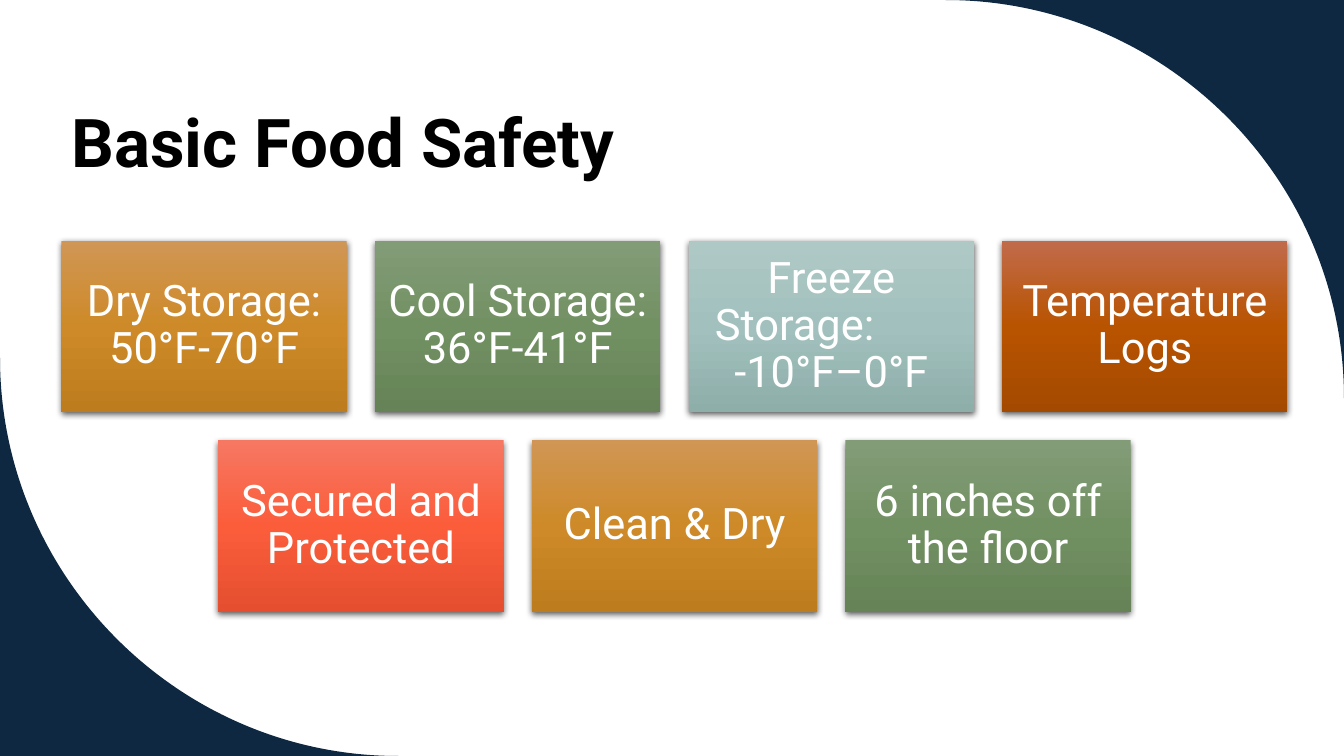
from dataclasses import dataclass
from copy import deepcopy

from lxml import etree
from pptx import Presentation
from pptx.dml.color import RGBColor
from pptx.enum import shapes, text
from pptx.oxml import ns
from pptx.util import Inches, Pt

FONT = "Roboto"
NAVY = RGBColor(0x0E, 0x28, 0x41)
BLACK = RGBColor(0, 0, 0)
WHITE = RGBColor(0xFF, 0xFF, 0xFF)

# Gradients from top to bottom
GOLD = (RGBColor(0xD0, 0x96, 0x55), RGBColor(0xCE, 0x8A, 0x28), RGBColor(0xBD, 0x7C, 0x1D))
GREEN = (RGBColor(0x83, 0x9C, 0x78), RGBColor(0x72, 0x91, 0x63), RGBColor(0x65, 0x83, 0x56))
TEAL = (RGBColor(0xAE, 0xC8, 0xC5), RGBColor(0xA2, 0xC1, 0xBE), RGBColor(0x8E, 0xAE, 0xAA))
RUST = (RGBColor(0xC1, 0x6B, 0x4B), RGBColor(0xB8, 0x53, 0x00), RGBColor(0xA4, 0x4A, 0x00))
CORAL = (RGBColor(0xF6, 0x77, 0x62), RGBColor(0xFB, 0x5D, 0x3B), RGBColor(0xE5, 0x4F, 0x2F))

WIDE, HIGH = 13.33, 7.5
RADIUS = 3.95
BEND = 0.55  # pull of a curve's handles that makes a quarter circle
CARD_W, CARD_H, GAP = 2.83, 1.7, 0.28
MIDDLE, TOP = 6.69, 2.39


@dataclass
class Card:
    lines: list[str]
    shades: tuple[RGBColor, ...]
    shift: int | None = None  # index of the line set at the left


ROWS = [
    [
        Card(["Dry Storage: 50°F-70°F"], GOLD),
        Card(["Cool Storage: 36°F-41°F"], GREEN),
        Card(["Freeze", "Storage:", "-10°F–0°F"], TEAL, shift=1),
        Card(["Temperature Logs"], RUST),
    ],
    [
        Card(["Secured and Protected"], CORAL),
        Card(["Clean & Dry"], GOLD),
        Card(["6 inches off the floor"], GREEN),
    ],
]


def style(para, size: int, color: RGBColor, bold: bool = False) -> None:
    para.line_spacing = 0.9
    para.font.name = FONT
    para.font.size = Pt(size)
    para.font.bold = bold
    para.font.color.rgb = color


def bend_side(shape) -> None:
    """Turn the side opposite the first point into a quarter circle."""
    geom = shape.element.spPr
    first = geom.find(".//" + ns.qn("a:moveTo"))
    lines = geom.findall(".//" + ns.qn("a:lnTo"))
    corner, start, end = (
        (int(step[0].get("x")), int(step[0].get("y"))) for step in (first, *lines[:2]))
    curve = etree.Element(ns.qn("a:cubicBezTo"))
    for point, pull in ((start, BEND), (end, BEND), (end, 0)):
        x, y = (round(p + pull * (c - p)) for p, c in zip(point, corner))
        etree.SubElement(curve, ns.qn("a:pt"), x=str(x), y=str(y))
    lines[1].getparent().replace(lines[1], curve)


def draw_corner(slide, x: float, y: float) -> None:
    """Fill the area between a slide corner and a quarter circle."""
    side_x = x - RADIUS if x else RADIUS
    side_y = y - RADIUS if y else RADIUS
    pen = slide.shapes.build_freeform(Inches(x), Inches(y))
    ends = [(Inches(side_x), Inches(y)), (Inches(x), Inches(side_y))]
    pen.add_line_segments(ends, close=True)
    shape = pen.convert_to_shape()
    bend_side(shape)
    shape.shadow.inherit = False
    shape.fill.solid()
    shape.fill.fore_color.rgb = NAVY
    shape.line.fill.background()


def add_shade(shape, shades: tuple[RGBColor, ...]) -> None:
    shape.fill.gradient()
    shape.fill.gradient_angle = 270
    stops = shape.element.spPr.find(".//" + ns.qn("a:gsLst"))
    stops.append(deepcopy(stops[-1]))
    for i, (stop, color) in enumerate(zip(shape.fill.gradient_stops, shades)):
        stop.position = i / 2
        stop.color.rgb = color


def add_shadow(shape) -> None:
    shape.shadow.inherit = False
    effect = shape.element.spPr.find(ns.qn("a:effectLst"))
    outer = etree.SubElement(
        effect, ns.qn("a:outerShdw"), blurRad=str(Pt(4.5)), dist=str(Pt(1.5)),
        dir="5400000", algn="ctr", rotWithShape="0")
    color = etree.SubElement(outer, ns.qn("a:srgbClr"), val=str(BLACK))
    etree.SubElement(color, ns.qn("a:alpha"), val="63000")


def draw_card(slide, card: Card, x: float, y: float) -> None:
    shape = slide.shapes.add_shape(
        shapes.MSO_SHAPE.RECTANGLE, Inches(x), Inches(y), Inches(CARD_W), Inches(CARD_H))
    shape.line.fill.background()
    add_shade(shape, card.shades)
    add_shadow(shape)
    frame = shape.text_frame
    frame.word_wrap = True
    frame.vertical_anchor = text.MSO_ANCHOR.MIDDLE
    frame.margin_left = frame.margin_right = Inches(0.12)
    frame.margin_top, frame.margin_bottom = Inches(0.13), Inches(0.14)
    frame.text = "\n".join(card.lines)
    for i, para in enumerate(frame.paragraphs):
        style(para, 31, WHITE)
        para.alignment = text.PP_ALIGN.CENTER
        if i == card.shift:
            para.alignment = text.PP_ALIGN.LEFT
            para._p.get_or_add_pPr().set("marL", str(Inches(0.14)))


def draw_title(slide, words: str) -> None:
    box = slide.shapes.add_textbox(Inches(0.61), Inches(0.41), Inches(10.69), Inches(1.45))
    frame = box.text_frame
    frame.word_wrap = True
    frame.vertical_anchor = text.MSO_ANCHOR.BOTTOM
    frame.text = words
    style(frame.paragraphs[0], 48, BLACK, bold=True)


def main() -> None:
    deck = Presentation()
    deck.slide_width, deck.slide_height = Inches(WIDE), Inches(HIGH)
    slide = deck.slides.add_slide(deck.slide_layouts[6])

    # Corners: top right, bottom left
    draw_corner(slide, WIDE, 0)
    draw_corner(slide, 0, HIGH)

    draw_title(slide, "Basic Food Safety")

    # Rows of cards, each centred
    for r, row in enumerate(ROWS):
        left = MIDDLE - (len(row) * (CARD_W + GAP) - GAP) / 2
        for c, card in enumerate(row):
            draw_card(slide, card, left + c * (CARD_W + GAP), TOP + r * (CARD_H + GAP))

    deck.save("out.pptx")


if __name__ == "__main__":
    main()
